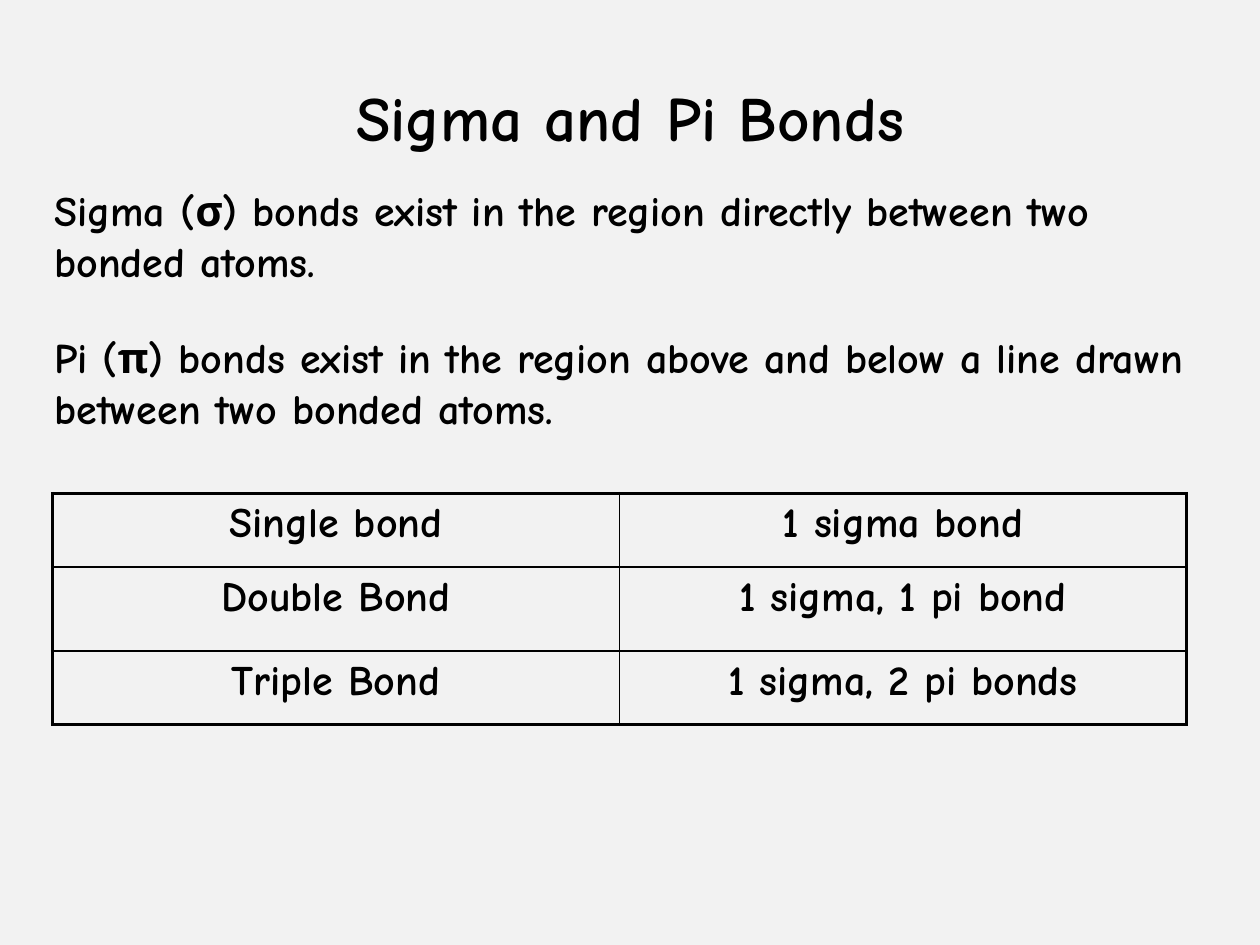
from pptx import Presentation
from pptx.dml.color import RGBColor
from pptx.enum.text import MSO_ANCHOR, PP_ALIGN
from pptx.oxml import parse_xml
from pptx.oxml.ns import nsdecls
from pptx.util import Pt

BLACK = RGBColor(0x00, 0x00, 0x00)
PALE = RGBColor(0xF2, 0xF2, 0xF2)
LEFT, CENTER = PP_ALIGN.LEFT, PP_ALIGN.CENTER
TOP, MIDDLE = MSO_ANCHOR.TOP, MSO_ANCHOR.MIDDLE
THICK, THIN = 2.25, 1

BONDS = [
    ("Single bond", "1 sigma bond"),
    ("Double Bond", "1 sigma, 1 pi bond"),
    ("Triple Bond", "1 sigma, 2 pi bonds"),
]


class Page:
    font = "Comic Neue"
    color = BLACK

    def __init__(self, slide):
        self.slide = slide
        fill = slide.background.fill
        fill.solid()
        fill.fore_color.rgb = PALE

    def style(self, para, size, align):
        para.alignment = align
        font = para.font
        font.name, font.size, font.bold = self.font, Pt(size), True
        font.color.rgb = self.color

    def text(self, words, x, y, w, h, size=24, align=LEFT, anchor=TOP):
        box = self.slide.shapes.add_textbox(Pt(x), Pt(y), Pt(w), Pt(h))
        frame = box.text_frame
        frame.word_wrap = True
        frame.vertical_anchor = anchor
        frame.text = words
        self.style(frame.paragraphs[0], size, align)

    def edge(self, cell, sides):
        """Draw the cell's borders; sides maps L, R, T, B, in that order, to widths."""
        props = cell._tc.get_or_add_tcPr()
        for spot, (side, width) in enumerate(sides.items()):
            props.insert(spot, parse_xml(
                f'<a:ln{side} {nsdecls("a")} w="{Pt(width)}"><a:solidFill>'
                f'<a:srgbClr val="{self.color}"/></a:solidFill></a:ln{side}>'))

    def table(self, rows, x, y, widths, heights, size=24):
        table = self.slide.shapes.add_table(
            len(rows), len(widths), Pt(x), Pt(y),
            Pt(sum(widths)), Pt(sum(heights))).table
        table.first_row = table.horz_banding = False
        for col, width in zip(table.columns, widths):
            col.width = Pt(width)
        for row, height in zip(table.rows, heights):
            row.height = Pt(height)
        last_row, last_col = len(rows) - 1, len(widths) - 1
        for r, row in enumerate(rows):
            for c, words in enumerate(row):
                cell = table.cell(r, c)
                cell.text = words
                cell.fill.background()
                self.style(cell.text_frame.paragraphs[0], size, CENTER)
                outer = {"L": c == 0, "R": c == last_col,
                         "T": r == 0, "B": r == last_row}
                self.edge(cell, {side: THICK if out else THIN
                                 for side, out in outer.items()})


def main():
    deck = Presentation()
    deck.slide_width, deck.slide_height = Pt(720), Pt(540)
    page = Page(deck.slides.add_slide(deck.slide_layouts[6]))
    page.text("Sigma and Pi Bonds", 36, 21.6, 648, 90, 36, CENTER, MIDDLE)
    page.text("Sigma (σ) bonds exist in the region directly between two "
              "bonded atoms.", 24, 102, 661, 65)
    page.text("Pi (π) bonds exist in the region above and below a line drawn "
              "between two bonded atoms.", 24, 186, 661, 65)
    page.table(BONDS, 30, 282, [324, 324], [42, 48, 42])
    deck.save("out.pptx")


if __name__ == "__main__":
    main()
